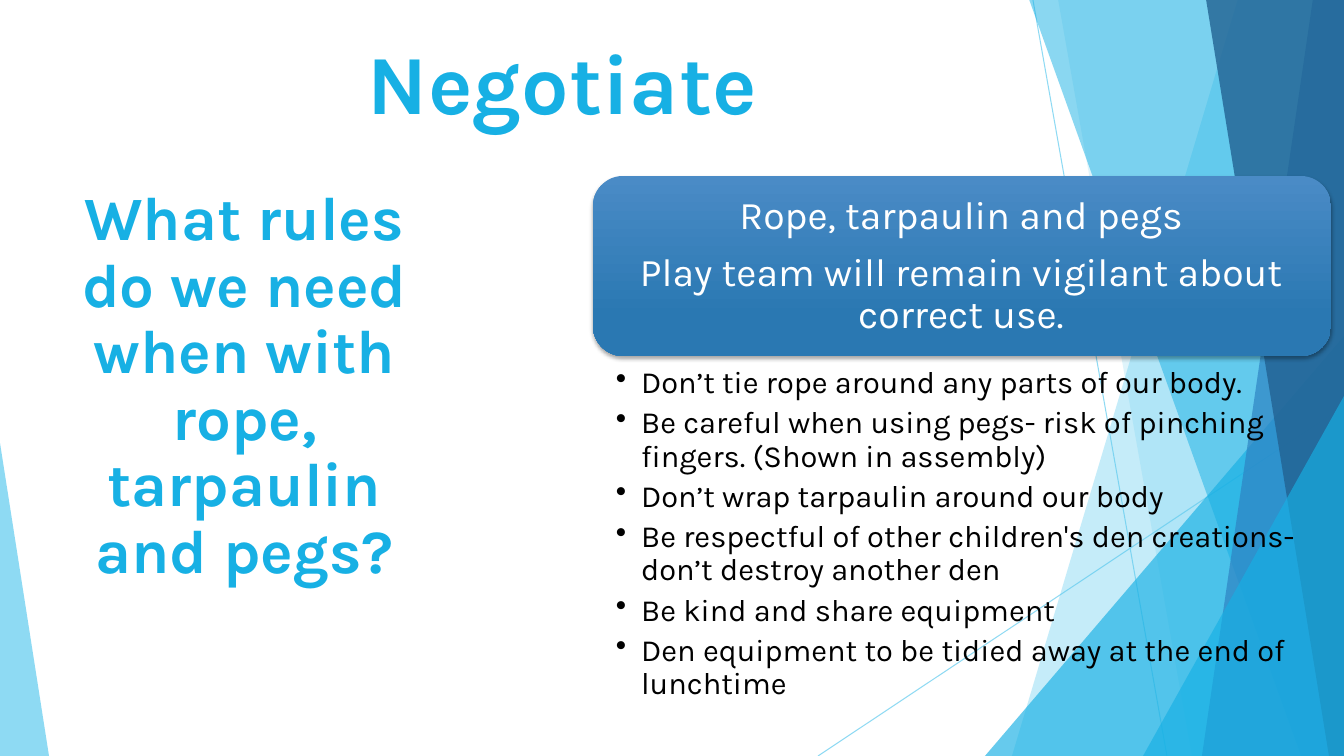
import pptx
import pptx.util
import pptx.dml.color
import pptx.enum.shapes
import pptx.enum.text
import pptx.oxml.ns
from lxml import etree

HUES = {
    "sky": "5FCBEF", "cyan": "17B0E4", "blue": "2E83C3", "navy": "226292",
    "top": "4A8BC6", "base": "2A78B2", "white": "FFFFFF", "black": "000000",
}
WIDE, HIGH = 1344, 756
SHAPE = pptx.enum.shapes.MSO_SHAPE
ALIGN = pptx.enum.text.PP_ALIGN
ANCHOR = pptx.enum.text.MSO_ANCHOR


def px(*sizes):
    return [round(size * 12192000 / WIDE) for size in sizes]


def add(node, tag, **attrs):
    return etree.SubElement(node, pptx.oxml.ns.qn(tag), attrs)


class Board:
    """Draws styled elements on the current slide."""

    def __init__(self, deck, font):
        self.font = font
        self.slide = deck.slides.add_slide(deck.slide_layouts[6])
        self.shapes = self.slide.shapes

    def rgb(self, hue):
        return pptx.dml.color.RGBColor.from_string(HUES[hue])

    def fade(self, shape, alpha):
        for node in shape.element.spPr.iter(pptx.oxml.ns.qn("a:srgbClr")):
            add(node, "a:alpha", val=str(alpha * 1000))

    def paint(self, shape, hue, alpha):
        shape.shadow.inherit = False
        shape.line.fill.background()
        shape.fill.solid()
        shape.fill.fore_color.rgb = self.rgb(hue)
        self.fade(shape, alpha)

    def line(self, ends, hue, alpha):
        kind = pptx.enum.shapes.MSO_CONNECTOR.STRAIGHT
        line = self.shapes.add_connector(kind, *px(*ends))
        line.line.color.rgb = self.rgb(hue)
        line.line.width = pptx.util.Pt(0.75)
        self.fade(line, alpha)
        add(line.element.spPr, "a:effectLst")

    def band(self, top, foot, hue, alpha):
        pen = self.shapes.build_freeform(*px(top, -1))
        points = [(WIDE, -1), (WIDE, HIGH), (foot, HIGH)]
        pen.add_line_segments([px(*point) for point in points])
        self.paint(pen.convert_to_shape(), hue, alpha)

    def wedge(self, box, tip, hue, alpha):
        wedge = self.shapes.add_shape(SHAPE.ISOSCELES_TRIANGLE, *px(*box))
        wedge.adjustments[0] = tip
        self.paint(wedge, hue, alpha)

    def card(self, box):
        card = self.shapes.add_shape(SHAPE.ROUNDED_RECTANGLE, *px(*box))
        card.line.fill.background()
        card.fill.gradient()
        card.fill.gradient_angle = 270
        stops = [("top", 0), ("base", 0.78)]
        for stop, (hue, place) in zip(card.fill.gradient_stops, stops):
            stop.color.rgb = self.rgb(hue)
            stop.position = place
        card.shadow.inherit = False
        effects = card.element.spPr.find(pptx.oxml.ns.qn("a:effectLst"))
        shade = add(effects, "a:outerShdw", blurRad="38100", dist="25400",
                    dir="5400000", rotWithShape="0")
        tint = add(shade, "a:srgbClr", val=HUES["black"])
        add(tint, "a:alpha", val="35000")

    def text(self, box, lines, size, hue, bold=False, align=ALIGN.LEFT,
             anchor=ANCHOR.TOP, pad=(10, 5, 10, 5), lead=0.9, after=6,
             bullet=False):
        frame = self.shapes.add_textbox(*px(*box)).text_frame
        frame.word_wrap = True
        frame.vertical_anchor = anchor
        (frame.margin_left, frame.margin_top,
         frame.margin_right, frame.margin_bottom) = px(*pad)
        frame.text = "\n".join(lines)
        for para in frame.paragraphs:
            para.alignment = align
            para.line_spacing = lead
            para.space_after = pptx.util.Pt(after)
            if bullet:
                props = para._p.get_or_add_pPr()
                props.set("marL", "228600")
                props.set("indent", "-228600")
                add(props, "a:buChar", char="•")
            for run in para.runs:
                run.font.name = self.font
                run.font.size = pptx.util.Pt(size)
                run.font.bold = bold
                run.font.color.rgb = self.rgb(hue)


def main():
    deck = pptx.Presentation()
    deck.slide_width, deck.slide_height = px(WIDE, HIGH)
    board = Board(deck, "Karla")

    board.line((1033, 0, 1167, HIGH), "sky", 70)
    board.line((WIDE, 406, 818, HIGH), "sky", 70)
    board.band(1238, 1012, "sky", 36)
    board.band(1058, 1192, "sky", 20)
    board.wedge((985, 336, 359, 420), 1, "cyan", 66)
    board.band(1029, 1301, "cyan", 50)
    board.band(1313, 1202, "blue", 70)
    board.band(1206, 1329, "navy", 80)
    board.wedge((1143, 396, 201, 360), 1, "cyan", 66)
    board.wedge((0, 443, 49, 313), 0, "sky", 70)

    board.text((358, 26, 672, 112), ["Negotiate"], 60, "cyan", bold=True,
               lead=1.0)
    board.text((49, 176, 391, 422),
               ["What rules do we need when with rope, tarpaulin and pegs?"],
               44, "cyan", bold=True, align=ALIGN.CENTER,
               anchor=ANCHOR.MIDDLE)

    board.card((593, 176, 738, 180))
    board.text((601, 185, 720, 163),
               ["Rope, tarpaulin and pegs",
                "Play team will remain vigilant about correct use."],
               28, "white", align=ALIGN.CENTER, anchor=ANCHOR.MIDDLE,
               pad=(12, 12, 12, 12), after=10)
    rules = [
        "Don’t tie rope around any parts of our body.",
        "Be careful when using pegs- risk of pinching fingers. "
        "(Shown in assembly)",
        "Don’t wrap tarpaulin around our body",
        "Be respectful of other children's den creations- "
        "don’t destroy another den",
        "Be kind and share equipment",
        "Den equipment to be tidied away at the end of lunchtime",
    ]
    board.text((593, 363, 738, 339), rules, 22, "black",
               pad=(23, 4, 22, 4), after=5, bullet=True)

    deck.save("out.pptx")


if __name__ == "__main__":
    main()
